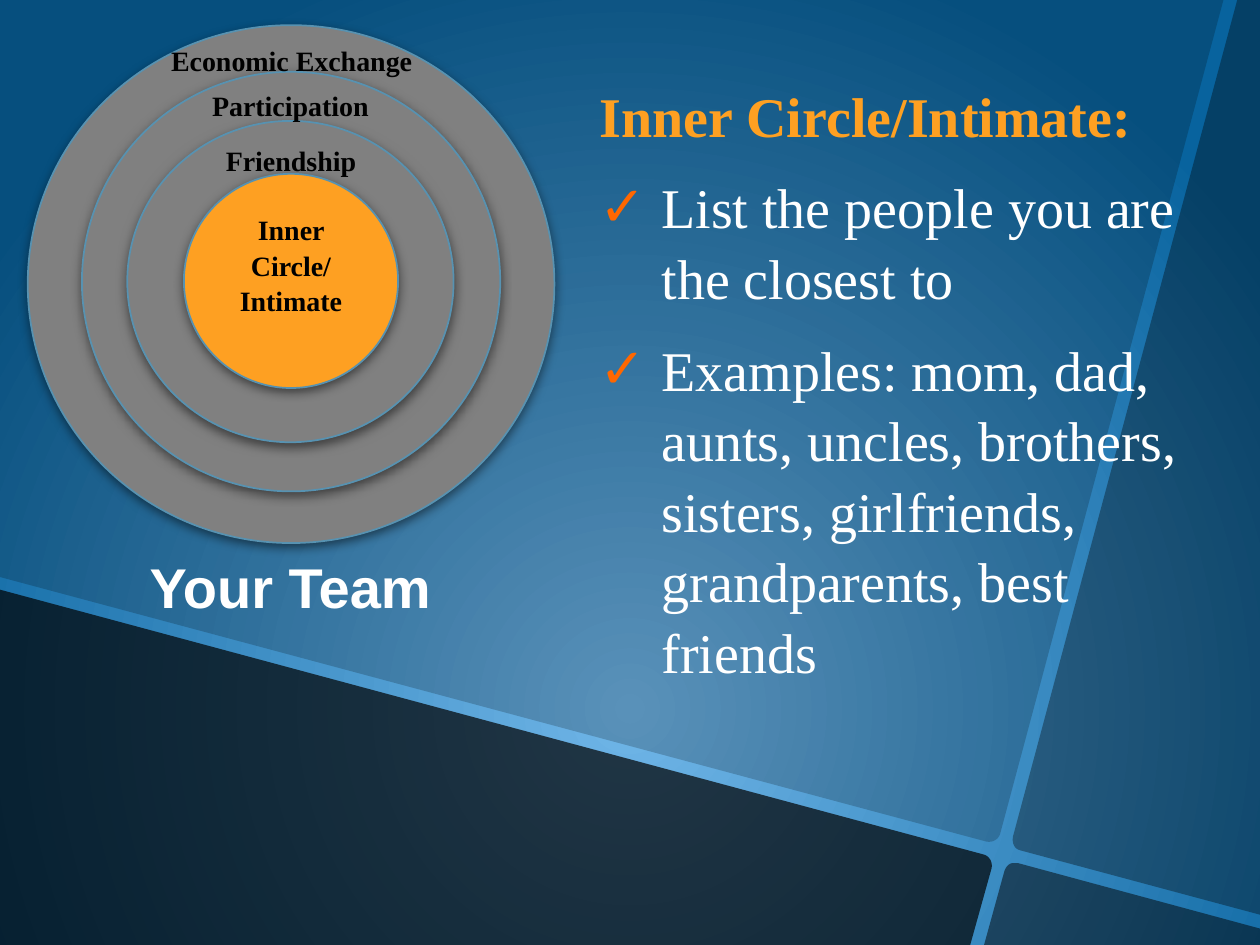
from dataclasses import dataclass

from lxml import etree
from pptx import Presentation
from pptx.dml.color import RGBColor
from pptx.enum.shapes import MSO_SHAPE
from pptx.enum.text import MSO_ANCHOR, MSO_AUTO_SIZE, PP_ALIGN
from pptx.oxml.ns import qn
from pptx.util import Inches, Pt

OVAL = MSO_SHAPE.OVAL
TOP = MSO_ANCHOR.TOP
NO_FIT = MSO_AUTO_SIZE.NONE
LEFT, CENTER = PP_ALIGN.LEFT, PP_ALIGN.CENTER
CURVE_STEPS = 8


@dataclass(frozen=True)
class Theme:
    """Colours, fonts and type sizes of the slide."""
    glow: str = "70B6E8"
    deep: str = "08639E"
    black: str = "000000"
    white: str = "FFFFFF"
    ring: str = "808080"
    ring_line: str = "5792B1"
    accent: str = "FEA022"
    check: str = "FF6700"
    serif: str = "Times New Roman"
    sans: str = "Arial"
    large: int = 32
    small: int = 16
    leading: float = 1.05


def rgb(value):
    """Return a colour from its hex text."""
    return RGBColor.from_string(value)


def add_xml(parent, tag, **attrs):
    """Append a DrawingML element and return it."""
    return etree.SubElement(parent, qn(f"a:{tag}"), {k: str(v) for k, v in attrs.items()})


def curve_points(start, c1, c2, end):
    """Return points along a cubic curve, without its start."""
    points = []
    for step in range(1, CURVE_STEPS + 1):
        t = step / CURVE_STEPS
        u = 1 - t
        weights = (u ** 3, 3 * u * u * t, 3 * u * t * t, t ** 3)
        points.append(tuple(sum(w * pt[axis] for w, pt in zip(weights, (start, c1, c2, end)))
                            for axis in (0, 1)))
    return points


class SlideBuilder:
    """Draws themed elements on one slide."""

    def __init__(self, slide, theme):
        """Keep the slide and its theme."""
        self.s = slide
        self.theme = theme

    def background(self):
        """Fill the background with a radial gradient."""
        fill = self.s.background.fill
        fill.gradient()
        for stop, color, position in zip(fill.gradient_stops,
                                         (self.theme.glow, self.theme.deep), (0, 1)):
            stop.color.rgb = rgb(color)
            stop.position = position
        grad = self.s.element.find(".//" + qn("a:gradFill"))
        grad.remove(grad.find(qn("a:lin")))
        circle = add_xml(grad, "path", path="circle")
        add_xml(circle, "fillToRect", l=50000, t=50000, r=50000, b=0)

    def panel(self, outline, opacity):
        """Draw a translucent black panel; six-number entries are curves."""
        points = []
        for entry in outline:
            if len(entry) == 6:
                points += curve_points(points[-1], entry[:2], entry[2:4], entry[4:])
            else:
                points.append(entry)
        points = [(Inches(x), Inches(y)) for x, y in points]
        builder = self.s.shapes.build_freeform(*points[0])
        builder.add_line_segments(points[1:], close=True)
        sp = builder.convert_to_shape()
        sp.shadow.inherit = False
        sp.fill.solid()
        sp.fill.fore_color.rgb = rgb(self.theme.black)
        sp.line.fill.background()
        color = sp.element.spPr.find(qn("a:solidFill")).find(qn("a:srgbClr"))
        add_xml(color, "alpha", val=opacity * 1000)

    def ring(self, box, color):
        """Draw a circle with a soft shadow below it."""
        sp = self.s.shapes.add_shape(OVAL, *map(Inches, box))
        sp.fill.solid()
        sp.fill.fore_color.rgb = rgb(color)
        sp.line.color.rgb = rgb(self.theme.ring_line)
        sp.line.width = Pt(1)
        sp.shadow.inherit = False
        effects = sp.element.spPr.find(qn("a:effectLst"))
        shadow = add_xml(effects, "outerShdw", blurRad=Pt(6), dist=Pt(2),
                         dir=90 * 60000, rotWithShape=0)
        add_xml(add_xml(shadow, "srgbClr", val=self.theme.black), "alpha", val=50000)
        return sp

    def set_text(self, sp, lines, size, font, color, bold=True, align=CENTER, wrap=True):
        """Put styled paragraphs into a shape."""
        tf = sp.text_frame
        tf.text = "\n".join(lines)
        tf.word_wrap = wrap
        tf.auto_size = NO_FIT
        tf.vertical_anchor = TOP
        for p in tf.paragraphs:
            p.alignment = align
            p.line_spacing = self.theme.leading
            p.space_before = Pt(0)
            for r in p.runs:
                r.font.size = Pt(size)
                r.font.name = font
                r.font.bold = bold
                r.font.color.rgb = rgb(color)

    def label(self, box, text):
        """Add a ring name."""
        sp = self.s.shapes.add_textbox(*map(Inches, box))
        self.set_text(sp, [text], self.theme.small, self.theme.serif, self.theme.black,
                      wrap=False)

    def place(self, sp, box):
        """Move a placeholder to its box and to the front."""
        sp.left, sp.top, sp.width, sp.height = map(Inches, box)
        sp.element.getparent().append(sp.element)

    def title(self, box, text):
        """Fill the title placeholder."""
        sp = self.s.shapes.title
        self.place(sp, box)
        self.set_text(sp, [text], self.theme.large, self.theme.sans, self.theme.white)

    def checklist(self, box, heading, items):
        """Fill the body placeholder with a heading and checked items."""
        sp = self.s.placeholders[1]
        self.place(sp, box)
        self.set_text(sp, [heading, *items], self.theme.large, self.theme.serif,
                      self.theme.white, bold=False, align=LEFT)
        head, *rest = sp.text_frame.paragraphs
        pPr = head._p.get_or_add_pPr()
        pPr.set("marL", "0")
        pPr.set("indent", "0")
        add_xml(pPr, "buNone")
        head.runs[0].font.bold = True
        head.runs[0].font.color.rgb = rgb(self.theme.accent)
        for p in rest:
            p.space_before = Pt(12)
            pPr = p._p.get_or_add_pPr()
            pPr.set("marL", str(Inches(0.49)))
            pPr.set("indent", str(-Inches(0.49)))
            add_xml(add_xml(pPr, "buClr"), "srgbClr", val=self.theme.check)
            add_xml(pPr, "buChar", char="✓")


PANELS = [
    ([(0, 0), (9.71, 0), (7.94, 6.61), (7.93, 6.66, 7.88, 6.69, 7.83, 6.68), (0, 4.58)], 20),
    ([(0, 4.68), (7.8, 6.78), (7.85, 6.79, 7.88, 6.84, 7.87, 6.89), (7.7, 7.5), (0, 7.5)], 70),
    ([(8.04, 6.85), (8.05, 6.85, 8.07, 6.85, 8.08, 6.85), (10, 7.37), (10, 7.5), (7.81, 7.5),
      (7.97, 6.92), (7.98, 6.88, 8.01, 6.85, 8.04, 6.85)], 50),
    ([(9.82, 0), (10, 0), (10, 7.26), (8.1, 6.75), (8.05, 6.74, 8.03, 6.69, 8.04, 6.64)], 35),
]
OUTER_RINGS = [(0.22, 0.2, 4.18, 4.11), (0.65, 0.57, 3.32, 3.33), (1.01, 0.96, 2.59, 2.55)]
RING_LABELS = [
    ((1.58, 1.08, 1.46, 0.41), "Friendship"),
    ((1.45, 0.64, 1.71, 0.41), "Participation"),
    ((1.06, 0.28, 2.51, 0.41), "Economic Exchange"),
]


def main():
    """Build and save the slide."""
    prs = Presentation()
    prs.slide_width, prs.slide_height = Inches(10), Inches(7.5)
    theme = Theme()
    builder = SlideBuilder(prs.slides.add_slide(prs.slide_layouts[1]), theme)
    builder.background()
    for outline, opacity in PANELS:
        builder.panel(outline, opacity)
    for box in OUTER_RINGS:
        builder.ring(box, theme.ring)
    core = builder.ring((1.46, 1.38, 1.7, 1.7), theme.accent)
    builder.set_text(core, ["Inner Circle/ Intimate"], theme.small, theme.serif, theme.black)
    for box, text in RING_LABELS:
        builder.label(box, text)
    builder.checklist((4.66, 0.57, 5.04, 4.75), "Inner Circle/Intimate:", [
        "List the people you are the closest to",
        "Examples: mom, dad, aunts, uncles, brothers, sisters, girlfriends, "
        "grandparents, best friends"])
    builder.title((0.9, 4.31, 2.81, 0.64), "Your Team")
    prs.save("out.pptx")


if __name__ == "__main__":
    main()
